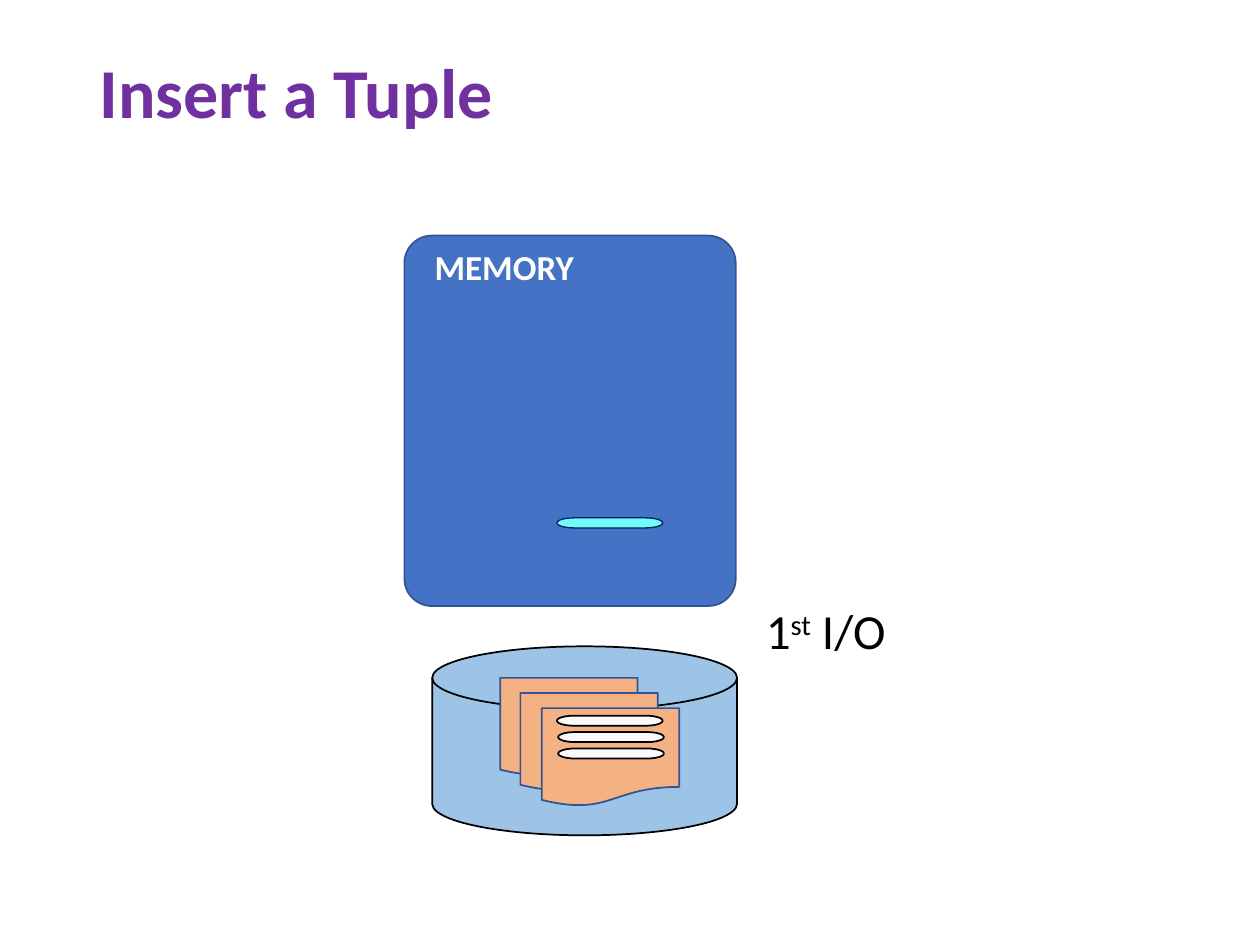
from pptx import Presentation
from pptx.dml.color import RGBColor
from pptx.enum.shapes import MSO_SHAPE
from pptx.enum.text import MSO_ANCHOR, MSO_AUTO_SIZE, PP_ALIGN
from pptx.util import Inches, Pt

ROUNDED = MSO_SHAPE.ROUNDED_RECTANGLE
DISK = MSO_SHAPE.FLOWCHART_MAGNETIC_DISK
DOCUMENT = MSO_SHAPE.FLOWCHART_DOCUMENT
TERMINATOR = MSO_SHAPE.FLOWCHART_TERMINATOR
MIDDLE = MSO_ANCHOR.MIDDLE
FIT_SHAPE = MSO_AUTO_SIZE.SHAPE_TO_FIT_TEXT
LEFT = PP_ALIGN.LEFT
FONT = "Calibri"
BLACK = "000000"
EDGE_BLUE = "325491"


def color(value):
    """Return the colour for a hex string."""
    return RGBColor.from_string(value)


def format_run(run, size, value, bold=False):
    """Set the font of a run."""
    run.font.name = FONT
    run.font.size = Pt(size)
    run.font.bold = bold
    run.font.color.rgb = color(value)


def add_title(slide, text):
    """Place and format the title."""
    title = slide.shapes.title
    title.left, title.top = Inches(0.69), Inches(0.4)
    title.width, title.height = Inches(8.62), Inches(0.72)
    title.text_frame.text = text
    title.text_frame.vertical_anchor = MIDDLE
    paragraph = title.text_frame.paragraphs[0]
    paragraph.alignment = LEFT
    paragraph.line_spacing = 0.9
    format_run(paragraph.runs[0], 40, "7030A0", True)


def add_shape(shapes, kind, box, fill, line, line_width=1):
    """Add a filled and outlined preset shape."""
    shape = shapes.add_shape(kind, *map(Inches, box))
    shape.shadow.inherit = False
    shape.fill.solid()
    shape.fill.fore_color.rgb = color(fill)
    shape.line.color.rgb = color(line)
    shape.line.width = Pt(line_width)
    return shape


def add_label(slide, box, parts, size, value, bold=False):
    """Add a one-line label and return its runs."""
    label = slide.shapes.add_textbox(*map(Inches, box))
    label.text_frame.word_wrap = False
    label.text_frame.auto_size = FIT_SHAPE
    paragraph = label.text_frame.paragraphs[0]
    for part in parts:
        run = paragraph.add_run()
        run.text = part
        format_run(run, size, value, bold)
    return paragraph.runs


def add_page(shapes, left, top):
    """Add one disk page."""
    add_shape(shapes, DOCUMENT, (left, top, 1.09, 0.78), "F4B183", EDGE_BLUE)


def add_tuple(shapes, left, top, fill, line, line_width=1):
    """Add one tuple bar."""
    add_shape(shapes, TERMINATOR, (left, top, 0.84, 0.08), fill, line, line_width)


def add_disk(slide):
    """Add the disk with its stacked pages and stored tuples."""
    add_shape(slide.shapes, DISK, (3.43, 5.13, 2.42, 1.5), "9DC3E6", BLACK)
    for left, top in ((3.97, 5.38), (4.13, 5.5)):
        add_page(slide.shapes, left, top)
    front_page = slide.shapes.add_group_shape()
    add_page(front_page.shapes, 4.3, 5.62)
    for row, left in enumerate((4.42, 4.43, 4.43)):
        add_tuple(front_page.shapes, left, 5.68 + 0.13 * row, "FAFAFA", BLACK)


def main():
    """Build and save the slide."""
    presentation = Presentation()
    presentation.slide_width, presentation.slide_height = Inches(10), Inches(7.5)
    slide = presentation.slides.add_slide(presentation.slide_layouts[5])
    memory = add_shape(slide.shapes, ROUNDED, (3.21, 1.87, 2.63, 2.94), "4472C4", EDGE_BLUE)
    memory.adjustments[0] = 0.083
    add_title(slide, "Insert a Tuple")
    add_disk(slide)
    add_tuple(slide.shapes, 4.42, 4.11, "72FCF9", "002060", 0.75)
    runs = add_label(slide, (5.98, 4.72, 1.19, 0.57), ("1", "st", " I/O"), 28, BLACK)
    runs[1].font._element.set("baseline", "30000")
    add_label(slide, (3.35, 1.9, 1.32, 0.44), ("MEMORY",), 20, "FFFFFF", True)
    presentation.save("out.pptx")


if __name__ == "__main__":
    main()
